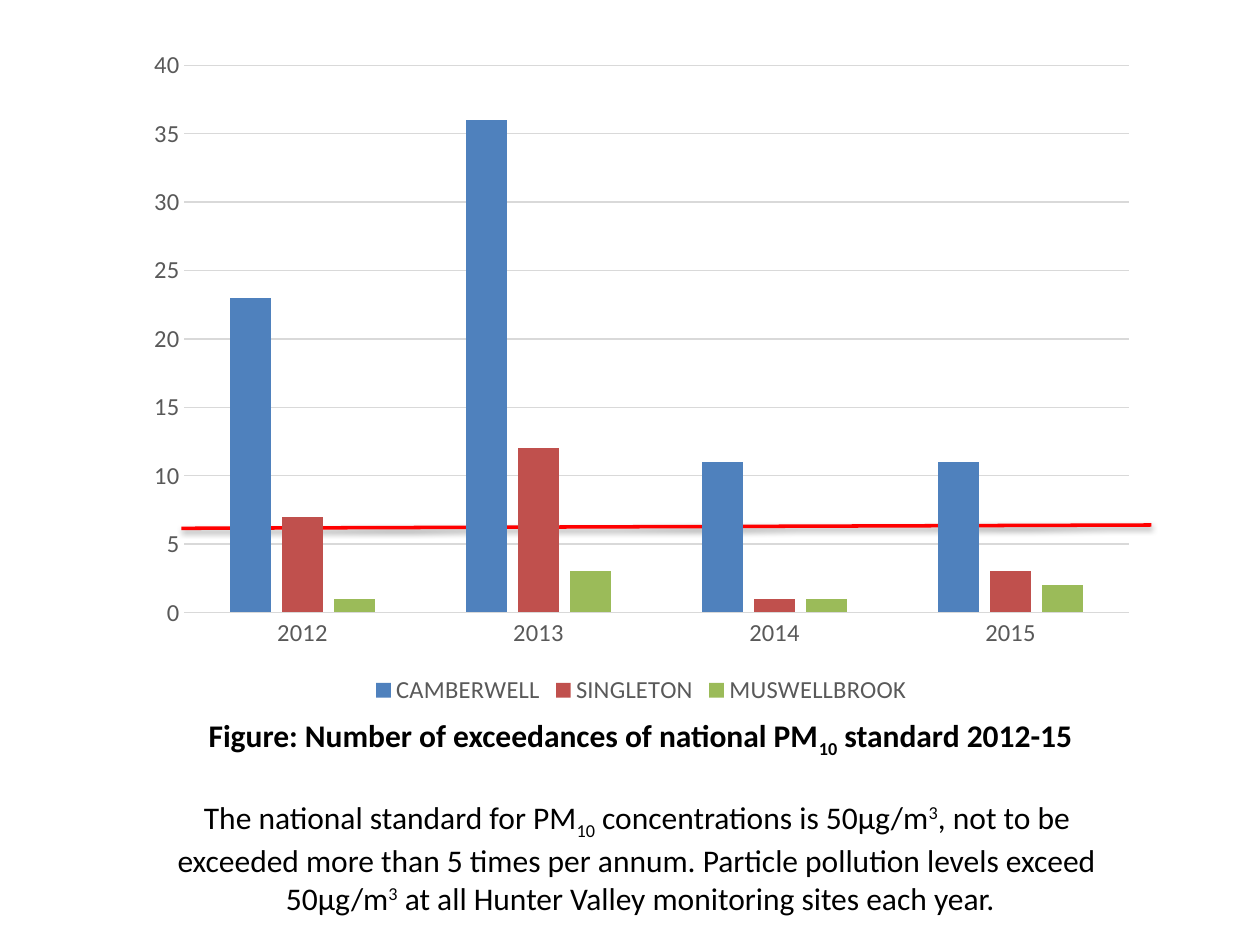
from lxml import etree
from pptx import Presentation
from pptx import util as u
from pptx.chart.data import CategoryChartData
from pptx.dml.color import RGBColor
from pptx.enum import chart as ch, shapes, text
from pptx.oxml import parse_xml
from pptx.oxml.ns import nsdecls

Pt = u.Pt
BLACK = RGBColor(0x00, 0x00, 0x00)
GREY = RGBColor(0x59, 0x59, 0x59)
PALE = RGBColor(0xD9, 0xD9, 0xD9)
RED = RGBColor(0xFF, 0x00, 0x00)
BLUE = RGBColor(0x4F, 0x81, 0xBD)
BRICK = RGBColor(0xC0, 0x50, 0x4D)
GREEN = RGBColor(0x9B, 0xBB, 0x59)

SUB, SUP = -25000, 30000
YEARS = ["2012", "2013", "2014", "2015"]
SITES = [
    ("CAMBERWELL", (23, 36, 11, 11), BLUE),
    ("SINGLETON", (7, 12, 1, 3), BRICK),
    ("MUSWELLBROOK", (1, 3, 1, 2), GREEN),
]
FIGURE = [[("Figure: Number of exceedances of national PM", 0), ("10", SUB),
           (" standard 2012-15", 0)]]
NOTE = [
    [("The national standard for PM", 0), ("10", SUB),
     (" concentrations is 50μg/m", 0), ("3", SUP), (", not to be ", 0)],
    [("exceeded more than 5 times per annum. Particle pollution levels exceed ", 0)],
    [("50μg/m", 0), ("3", SUP), (" at all Hunter Valley monitoring sites each year.", 0)],
]


class Page:
    def __init__(self, slide, face="Calibri", big=18, small=14):
        self.slide, self.face, self.big, self.small = slide, face, big, small

    def style(self, font, size, color, bold=False):
        font.name, font.size, font.bold = self.face, Pt(size), bold
        font.color.rgb = color

    def lines(self, para, rows, bold=False):
        """Fill a centred paragraph with rows of (text, baseline) runs."""
        para.alignment = text.PP_ALIGN.CENTER
        for i, row in enumerate(rows):
            if i:
                para.add_line_break()
            for words, base in row:
                run = para.add_run()
                run.text = words
                self.style(run.font, self.big, BLACK, bold)
                if base:
                    run.font._element.set("baseline", str(base))

    def title(self, box, head, body, gap):
        shape = self.slide.shapes.title
        shape.left, shape.top, shape.width, shape.height = map(Pt, box)
        frame = shape.text_frame
        frame.word_wrap = True
        frame.auto_size = text.MSO_AUTO_SIZE.NONE
        frame.vertical_anchor = text.MSO_ANCHOR.MIDDLE
        self.lines(frame.paragraphs[0], head, True)
        para = frame.add_paragraph()
        para.space_before = Pt(gap)
        self.lines(para, body)

    def limit(self, ends, color, width):
        """Draw a straight line with a soft shadow below it."""
        line = self.slide.shapes.add_connector(
            shapes.MSO_CONNECTOR.STRAIGHT, *map(Pt, ends))
        line.line.color.rgb, line.line.width = color, Pt(width)
        line._element.spPr.append(parse_xml(
            f'<a:effectLst {nsdecls("a")}><a:outerShdw blurRad="{Pt(3.1)}" '
            f'dist="{Pt(1.6)}" dir="5400000" rotWithShape="0"><a:srgbClr val="000000">'
            '<a:alpha val="38000"/></a:srgbClr></a:outerShdw></a:effectLst>'))

    def axis(self, axis):
        axis.major_tick_mark = axis.minor_tick_mark = ch.XL_TICK_MARK.NONE
        self.style(axis.tick_labels.font, self.small, GREY)

    def columns(self, box, cats, rows):
        data = CategoryChartData()
        data.categories = cats
        for name, vals, _ in rows:
            data.add_series(name, vals)
        chart = self.slide.shapes.add_chart(
            ch.XL_CHART_TYPE.COLUMN_CLUSTERED, *map(Pt, box), data).chart
        self.style(chart.font, self.small, BLACK)
        chart.has_title = False
        chart.has_legend = True
        chart.legend.position = ch.XL_LEGEND_POSITION.BOTTOM
        chart.legend.include_in_layout = False
        self.style(chart.legend.font, self.small, GREY)

        plot = chart.plots[0]
        plot.gap_width, plot.overlap, plot.vary_by_categories = 219, -27, False
        for series, (_, _, color) in zip(plot.series, rows):
            series.format.fill.solid()
            series.format.fill.fore_color.rgb = color
            series.invert_if_negative = False

        cat, val = chart.category_axis, chart.value_axis
        self.axis(cat)
        self.axis(val)
        val.minimum_scale, val.maximum_scale, val.major_unit = 0, 40, 5
        val.has_major_gridlines = True
        val.format.line.fill.background()
        for line in (cat.format.line, val.major_gridlines.format.line):
            line.color.rgb, line.width = PALE, Pt(0.75)


def main():
    deck = Presentation()
    deck.slide_width, deck.slide_height = Pt(720), Pt(540)
    page = Page(deck.slides.add_slide(deck.slide_layouts[5]))
    page.title((42, 406, 648, 121), FIGURE, NOTE, 22)
    page.limit((103.7, 301.9, 658, 300), RED, 2)
    page.columns((76.5, 21, 580, 385), YEARS, SITES)
    deck.save("out.pptx")


if __name__ == "__main__":
    main()
